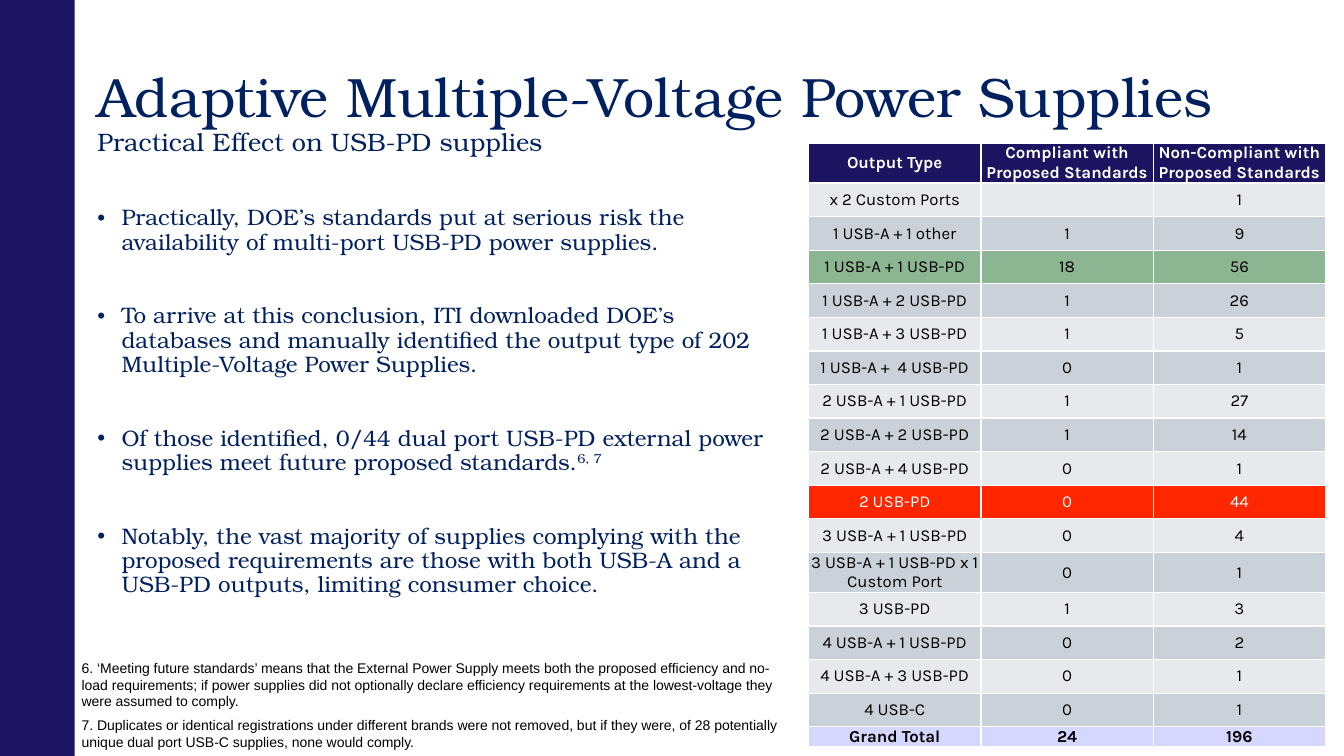
"""Build the slide on adaptive multiple-voltage power supplies."""
from lxml import etree
from pptx import Presentation
from pptx.dml.color import RGBColor
from pptx.enum.shapes import MSO_SHAPE
from pptx.enum.text import MSO_ANCHOR, MSO_AUTO_SIZE, PP_ALIGN
from pptx.oxml.ns import qn
from pptx.util import Pt

RECTANGLE = MSO_SHAPE.RECTANGLE
TOP, MIDDLE = MSO_ANCHOR.TOP, MSO_ANCHOR.MIDDLE
NO_FIT = MSO_AUTO_SIZE.NONE
LEFT, CENTER = PP_ALIGN.LEFT, PP_ALIGN.CENTER

BAR = RGBColor(0x1E, 0x14, 0x64)
NAVY = RGBColor(0x00, 0x20, 0x60)
BLACK = RGBColor(0x00, 0x00, 0x00)
WHITE = RGBColor(0xFF, 0xFF, 0xFF)
HEADER = RGBColor(0x1C, 0x14, 0x60)
LIGHT = RGBColor(0xE7, 0xE9, 0xEC)
DARK = RGBColor(0xCA, 0xD1, 0xD8)
GREEN = RGBColor(0x8C, 0xB5, 0x92)
RED = RGBColor(0xFF, 0x26, 0x00)
LILAC = RGBColor(0xD6, 0xD7, 0xFF)

SERIF, SANS, TABLE_FONT = "TeX Gyre Bonum", "Arial", "Karla"

TITLE_LINES = [
    ("Adaptive Multiple-Voltage Power Supplies", 39.6),
    ("Practical Effect on USB-PD supplies", 18),
]
BULLETS = [
    ("Practically, DOE’s standards put at serious risk the availability of "
     "multi-port USB-PD power supplies.", ""),
    ("To arrive at this conclusion, ITI downloaded DOE’s databases and manually "
     "identified the output type of 202 Multiple-Voltage Power Supplies.", ""),
    ("Of those identified, 0/44 dual port USB-PD external power supplies meet "
     "future proposed standards.", "6, 7"),
    ("Notably, the vast majority of supplies complying with the proposed "
     "requirements are those with both USB-A and a USB-PD outputs, limiting "
     "consumer choice.", ""),
]
FOOTNOTES = [
    "6. ‘Meeting future standards’ means that the External Power Supply meets both "
    "the proposed efficiency and no-load requirements; if power supplies did not "
    "optionally declare efficiency requirements at the lowest-voltage they were "
    "assumed to comply.",
    "7. Duplicates or identical registrations under different brands were not "
    "removed, but if they were, of 28 potentially unique dual port USB-C supplies, "
    "none would comply.",
]
OUTPUT_ROWS = [
    ("Output Type", "Compliant with Proposed Standards",
     "Non-Compliant with Proposed Standards"),
    ("x 2 Custom Ports", "", "1"),
    ("1 USB-A + 1 other", "1", "9"),
    ("1 USB-A + 1 USB-PD", "18", "56"),
    ("1 USB-A + 2 USB-PD", "1", "26"),
    ("1 USB-A + 3 USB-PD", "1", "5"),
    ("1 USB-A +  4 USB-PD", "0", "1"),
    ("2 USB-A + 1 USB-PD", "1", "27"),
    ("2 USB-A + 2 USB-PD", "1", "14"),
    ("2 USB-A + 4 USB-PD", "0", "1"),
    ("2 USB-PD", "0", "44"),
    ("3 USB-A + 1 USB-PD", "0", "4"),
    ("3 USB-A + 1 USB-PD x 1 Custom Port", "0", "1"),
    ("3 USB-PD", "1", "3"),
    ("4 USB-A + 1 USB-PD", "0", "2"),
    ("4 USB-A + 3 USB-PD", "0", "1"),
    ("4 USB-C", "0", "1"),
    ("Grand Total", "24", "196"),
]
LAST_ROW = len(OUTPUT_ROWS) - 1
ROW_FILLS = {0: HEADER, 3: GREEN, 10: RED, LAST_ROW: LILAC}
ROW_HEIGHTS = {0: 28.6, 12: 28.6, LAST_ROW: 14}
WHITE_TEXT_ROWS = (0, 10)
BOLD_ROWS = (0, LAST_ROW)


def place(box, left, top, width, height):
    """Set the position and size of a shape in points."""
    box.left, box.top = Pt(left), Pt(top)
    box.width, box.height = Pt(width), Pt(height)


def set_frame(box, anchor):
    """Give a text frame wrapping, narrow margins and an anchor."""
    frame = box.text_frame
    frame.word_wrap = True
    frame.auto_size = NO_FIT
    frame.vertical_anchor = anchor
    frame.margin_left = frame.margin_right = Pt(3.6)
    frame.margin_top = frame.margin_bottom = Pt(3.6)
    return frame


def add_paragraph(frame, index, gap, spacing):
    """Return a left-aligned paragraph with a gap above all but the first."""
    para = frame.add_paragraph() if index else frame.paragraphs[0]
    para.alignment = LEFT
    para.line_spacing = spacing
    para.space_before = Pt(gap if index else 0)
    para.space_after = Pt(0)
    return para


def add_span(para, text, font, size, color, bold=False):
    """Add one formatted run to a paragraph."""
    span = para.add_run()
    span.text = text
    span.font.name, span.font.size = font, Pt(size)
    span.font.color.rgb, span.font.bold = color, bold
    return span


def add_bullet(para):
    """Give a paragraph a round bullet with a hanging indent."""
    properties = para._p.get_or_add_pPr()
    properties.set("marL", str(Pt(17.3)))
    properties.set("indent", str(-Pt(17.3)))
    etree.SubElement(properties, qn("a:buFont")).set("typeface", "Arial")
    etree.SubElement(properties, qn("a:buChar")).set("char", "•")


def add_side_bar(page):
    """Draw the dark bar along the left edge."""
    bar = page.shapes.add_shape(RECTANGLE, Pt(0), Pt(0), Pt(53.3), Pt(540))
    bar.shadow.inherit = False
    bar.fill.solid()
    bar.fill.fore_color.rgb = BAR
    bar.line.fill.background()


def fill_title(page):
    """Write the title and its subtitle line."""
    box = page.shapes.title
    place(box, 66, 28.8, 828, 104.4)
    frame = set_frame(box, MIDDLE)
    for index, (text, size) in enumerate(TITLE_LINES):
        para = add_paragraph(frame, index, 0, 0.9)
        add_span(para, text, SERIF, size, NAVY)


def fill_body(page):
    """Write the bulleted findings."""
    box = page.placeholders[1]
    place(box, 66, 144, 489.6, 342.7)
    frame = set_frame(box, TOP)
    for index, (text, reference) in enumerate(BULLETS):
        para = add_paragraph(frame, index, 35.5, 0.9)
        add_bullet(para)
        add_span(para, text, SERIF, 16, NAVY)
        if reference:
            span = add_span(para, reference, SERIF, 16, NAVY)
            span.font._element.set("baseline", "32000")


def add_footnotes(page):
    """Write the notes at the foot of the page."""
    box = page.shapes.add_textbox(Pt(54.7), Pt(467.3), Pt(512.6), Pt(72.7))
    frame = set_frame(box, TOP)
    for index, text in enumerate(FOOTNOTES):
        add_span(add_paragraph(frame, index, 5, 1.0), text, SANS, 10, BLACK)


def add_borders(cell):
    """Draw a thin white line on every side of a cell."""
    properties = cell._tc.get_or_add_tcPr()
    for side in ("a:lnL", "a:lnR", "a:lnT", "a:lnB"):
        line = etree.SubElement(properties, qn(side), w=str(Pt(1)))
        fill = etree.SubElement(line, qn("a:solidFill"))
        etree.SubElement(fill, qn("a:srgbClr")).set("val", str(WHITE))


def format_cell(cell, text, row):
    """Fill one table cell and write its text."""
    cell.margin_left = cell.margin_right = Pt(0)
    cell.margin_top = cell.margin_bottom = Pt(0)
    cell.vertical_anchor = MIDDLE
    add_borders(cell)
    cell.fill.solid()
    cell.fill.fore_color.rgb = ROW_FILLS.get(row, LIGHT if row % 2 else DARK)
    if text:
        para = cell.text_frame.paragraphs[0]
        para.alignment = CENTER
        color = WHITE if row in WHITE_TEXT_ROWS else BLACK
        add_span(para, text, TABLE_FONT, 12, color, row in BOLD_ROWS)


def add_output_table(page):
    """Add the table of compliance by output type."""
    table = page.shapes.add_table(len(OUTPUT_ROWS), 3, Pt(577.6), Pt(102.2),
                                  Pt(369.3), Pt(431.2)).table
    for column in table.columns:
        column.width = Pt(123.1)
    for row, texts in enumerate(OUTPUT_ROWS):
        table.rows[row].height = Pt(ROW_HEIGHTS.get(row, 24))
        for column, text in enumerate(texts):
            format_cell(table.cell(row, column), text, row)


def main():
    """Build the deck and save it."""
    deck = Presentation()
    deck.slide_width, deck.slide_height = Pt(960), Pt(540)
    page = deck.slides.add_slide(deck.slide_layouts[1])
    add_side_bar(page)
    fill_title(page)
    fill_body(page)
    add_footnotes(page)
    add_output_table(page)
    deck.save("out.pptx")


if __name__ == "__main__":
    main()
